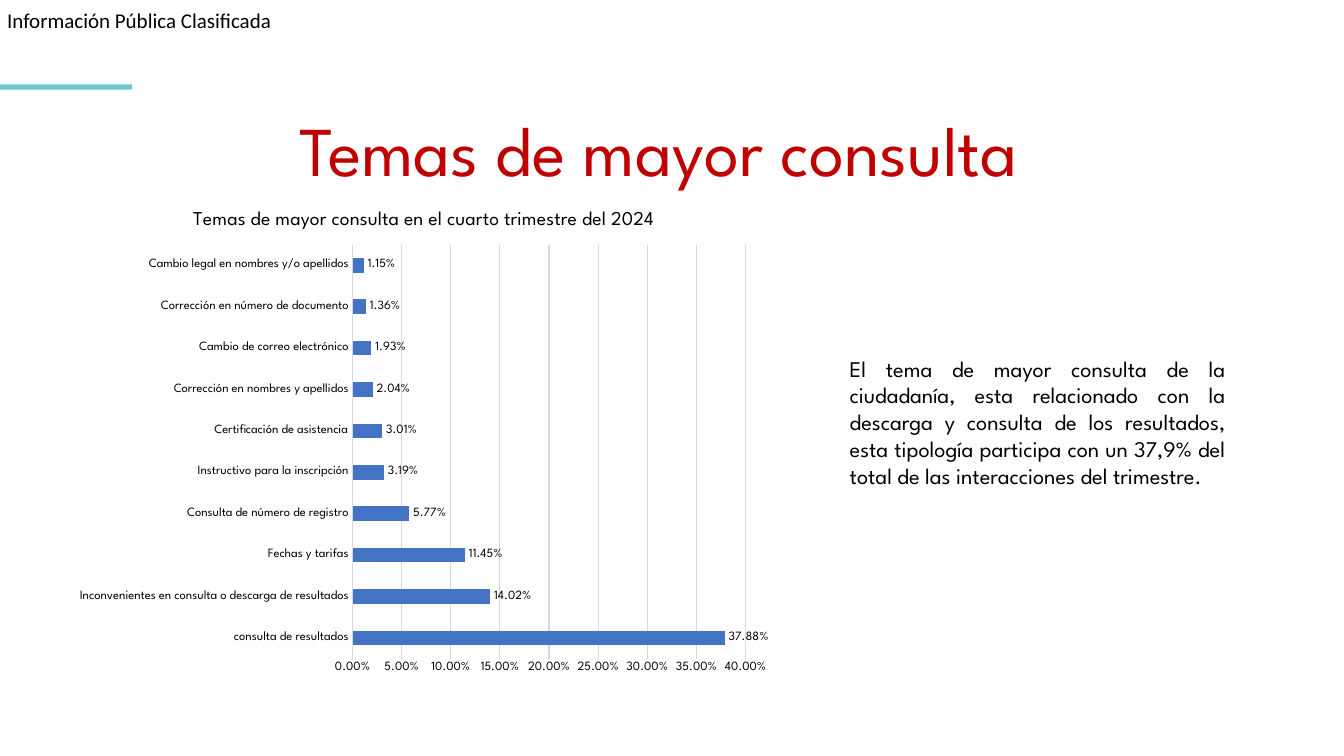
from lxml import etree
from pptx import Presentation
from pptx.chart.data import CategoryChartData
from pptx.dml.color import RGBColor
from pptx.enum.chart import XL_CHART_TYPE, XL_LABEL_POSITION, XL_TICK_MARK
from pptx.enum.shapes import MSO_SHAPE
from pptx.enum.text import MSO_ANCHOR, PP_ALIGN
from pptx.oxml.ns import qn
from pptx.util import Cm, Pt

BAR_CLUSTERED = XL_CHART_TYPE.BAR_CLUSTERED
OUTSIDE_END = XL_LABEL_POSITION.OUTSIDE_END
NO_TICK = XL_TICK_MARK.NONE
RECTANGLE = MSO_SHAPE.RECTANGLE
TOP, MIDDLE = MSO_ANCHOR.TOP, MSO_ANCHOR.MIDDLE
LEFT, CENTER, JUSTIFY = PP_ALIGN.LEFT, PP_ALIGN.CENTER, PP_ALIGN.JUSTIFY

# Content
CLASSIFICATION = "Información Pública Clasificada"
TITLE = "Temas de mayor consulta"
BODY = (
    "El tema de mayor consulta de la ciudadanía, esta relacionado con la descarga "
    "y consulta de los resultados, esta tipología participa con un 37,9% del total "
    "de las interacciones del trimestre."
)
CHART_TITLE = "Temas de mayor consulta en el cuarto trimestre del 2024"
TOPICS = [
    ("consulta de resultados", 0.3788),
    ("Inconvenientes en consulta o descarga de resultados", 0.1402),
    ("Fechas y tarifas", 0.1145),
    ("Consulta de número de registro", 0.0577),
    ("Instructivo para la inscripción", 0.0319),
    ("Certificación de asistencia", 0.0301),
    ("Corrección en nombres y apellidos", 0.0204),
    ("Cambio de correo electrónico", 0.0193),
    ("Corrección en número de documento", 0.0136),
    ("Cambio legal en nombres y/o apellidos", 0.0115),
]

# Style and places (left, top, width, height in centimetres)
COLORS = {"text": "000000", "title": "C00000", "accent": "6FC8D2",
          "bar": "4472C4", "rule": "D9D9D9"}
HEADING_FONT = "League Spartan"
PERCENT = "0.00%"
PLACES = {
    "classification": (0.18, 0.18, 6.81, 0.64),
    "accent": (0, 2.13, 3.33, 0.13),
    "title": (6.1, 2.54, 21.01, 2.39),
    "body": (21.16, 8.81, 9.98, 4.37),
    "chart": (1.68, 4.8, 18.01, 12.42),
}
PLOT_AREA = {"x": 0.4, "y": 0.11, "w": 0.55, "h": 0.84}


def place(name):
    return [Cm(length) for length in PLACES[name]]


def color(name):
    return RGBColor.from_string(COLORS[name])


def format_font(font, size, color_name="text", name=HEADING_FONT):
    for attribute, value in {"size": Pt(size), "name": name, "bold": False}.items():
        setattr(font, attribute, value)
    font.color.rgb = color(color_name)


def format_rule(line):
    line.color.rgb = color("rule")
    line.width = Pt(0.75)


def write_text(shape, text, size, alignment, anchor, **font):
    frame = shape.text_frame
    frame.text = text
    frame.vertical_anchor = anchor
    paragraph = frame.paragraphs[0]
    values = {"alignment": alignment, "space_before": Pt(0), "space_after": Pt(0)}
    for attribute, value in values.items():
        setattr(paragraph, attribute, value)
    format_font(paragraph.runs[0].font, size, **font)
    return frame


def move(shape, name):
    for attribute, value in zip(("left", "top", "width", "height"), place(name)):
        setattr(shape, attribute, value)


presentation = Presentation()
presentation.slide_width = Cm(33.87)
presentation.slide_height = Cm(19.05)
slide = presentation.slides.add_slide(presentation.slide_layouts[1])

# Classification line and accent bar
header = slide.shapes.add_textbox(*place("classification"))
header_frame = write_text(header, CLASSIFICATION, 15, LEFT, TOP, name="Calibri")
header_frame.word_wrap = True
for side in ("left", "top", "right", "bottom"):
    setattr(header_frame, f"margin_{side}", 0)

accent = slide.shapes.add_shape(RECTANGLE, *place("accent"))
accent.shadow.inherit = False
accent.fill.solid()
accent.fill.fore_color.rgb = color("accent")
accent.line.fill.background()

# Title and body
title, body = slide.placeholders
move(title, "title")
title_frame = write_text(title, TITLE, 50, CENTER, MIDDLE, color_name="title")
title_frame.word_wrap = False

move(body, "body")
body_frame = write_text(body, BODY, 16, JUSTIFY, TOP)
body_frame.word_wrap = True
properties = body_frame.paragraphs[0]._p.get_or_add_pPr()
properties.set("marL", "0")
properties.set("indent", "0")
etree.SubElement(properties, qn("a:buNone"))

# Chart
chart_data = CategoryChartData(number_format=PERCENT)
chart_data.categories = [topic for topic, share in TOPICS]
chart_data.add_series("Series 1", [share for topic, share in TOPICS])
chart = slide.shapes.add_chart(BAR_CLUSTERED, *place("chart"), chart_data).chart
format_font(chart.font, 10)
chart.has_legend = False
chart.has_title = True
chart_title = chart.chart_title.text_frame
chart_title.text = CHART_TITLE
format_font(chart_title.paragraphs[0].runs[0].font, 14)

# Axes
for axis in (chart.category_axis, chart.value_axis):
    axis.major_tick_mark = NO_TICK
    axis.minor_tick_mark = NO_TICK
    format_font(axis.tick_labels.font, 9)
format_rule(chart.category_axis.format.line)
value_axis = chart.value_axis
for attribute, value in {"minimum_scale": 0, "maximum_scale": 0.4,
                         "major_unit": 0.05}.items():
    setattr(value_axis, attribute, value)
value_axis.format.line.fill.background()
format_rule(value_axis.major_gridlines.format.line)
value_axis.tick_labels.number_format = PERCENT
value_axis.tick_labels.number_format_is_linked = False

# Bars and their labels
plot = chart.plots[0]
plot.gap_width = 182
plot.vary_by_categories = False
series = plot.series[0]
series.format.fill.solid()
series.format.fill.fore_color.rgb = color("bar")
labels = series.data_labels
for attribute, value in {"show_value": True, "number_format": PERCENT,
                         "number_format_is_linked": False,
                         "position": OUTSIDE_END}.items():
    setattr(labels, attribute, value)
format_font(labels.font, 9)

# Fixed plot area inside the chart
plot_area = chart._chartSpace.chart.plotArea
for old_layout in plot_area.findall(qn("c:layout")):
    plot_area.remove(old_layout)
layout = etree.Element(qn("c:layout"))
plot_area.insert(0, layout)
manual = etree.SubElement(layout, qn("c:manualLayout"))
settings = {"layoutTarget": "inner", "xMode": "edge", "yMode": "edge", **PLOT_AREA}
for tag, value in settings.items():
    etree.SubElement(manual, qn(f"c:{tag}")).set("val", str(value))

presentation.save("out.pptx")
